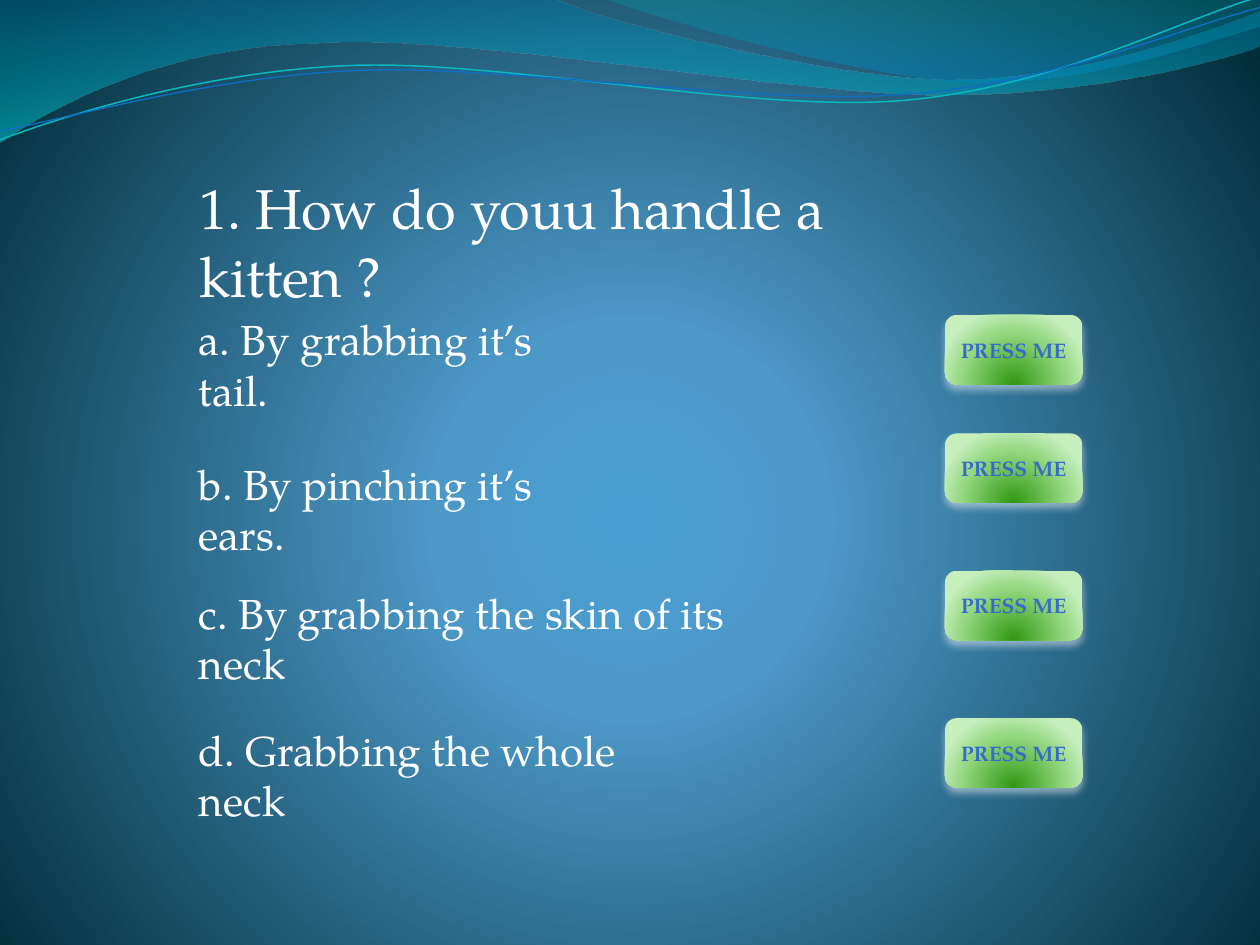
"""Build a quiz slide: one question, four answers and a button for each."""
from math import cos, radians, sin

from lxml.etree import SubElement
from pptx import Presentation
from pptx.dml.color import RGBColor
from pptx.enum.shapes import MSO_SHAPE
from pptx.enum.text import MSO_ANCHOR, MSO_AUTO_SIZE, PP_ALIGN
from pptx.oxml.ns import qn
from pptx.util import Inches, Pt

FONT = "TeX Gyre Pagella"
TILT = 2.7
COLORS = {
    "sky": "4AA0D6", "steel": "4C98C7", "night": "002C38",
    "deep": "0074A1", "aqua": "00C6CF", "teal": "00A1A9", "ocean": "008BBF",
    "cyan_line": "0AB8BF", "blue_line": "0F6FC6", "white": "FFFFFF",
    "green": "319811", "leaf": "95D882", "mint": "C6EFBD",
    "label1": "6488D4", "label2": "356BCA", "label3": "005DB1",
    "label4": "00539E", "label5": "00519B",
}
BACKDROP = [(0, "sky", 100), (25, "steel", 100), (100, "night", 100)]
BUTTON = [(0, "green", 100), (68, "leaf", 100), (100, "mint", 100)]
LABEL = [(0, "label1", 100), (49, "label2", 100), (50, "label3", 100),
         (92, "label4", 100), (100, "label5", 100)]
LEFT_WAVE = [
    [(0, 0)], [(4.4, -0.01)],
    [(4.76, 0.17), (6.64, 0.63), (7.58, 0.63)],
    [(8.53, 0.63), (9.58, 0.26), (10, 0.09)],
    [(10.01, 0.36)],
    [(9.83, 0.44), (8.7, 0.76), (7.46, 0.75)],
    [(6.22, 0.75), (3.82, 0.28), (2.57, 0.34)],
    [(1.29, 0.36), (0.46, 0.83), (-0.01, 1.13)],
    [(0, 0)],
]
RIGHT_WAVE = [
    [(4.79, -0.01)],
    [(5.09, 0.11), (6.82, 0.62), (7.69, 0.65)],
    [(8.56, 0.69), (9.61, 0.32), (10, 0.21)],
    [(10, 0)],
    [(4.79, -0.01)],
]
CYAN_CURVE = [
    [(0, 1.11)],
    [(0.48, 0.93), (1.58, 0.57), (2.77, 0.52)],
    [(3.95, 0.47), (5.93, 0.89), (7.13, 0.8)],
    [(8.33, 0.71), (9.38, 0.15), (9.98, -0.02)],
]
BLUE_CURVE = [
    [(0, 1.04)],
    [(0.47, 0.96), (1.64, 0.61), (2.83, 0.56)],
    [(4.03, 0.51), (5.97, 0.84), (7.17, 0.75)],
    [(8.36, 0.67), (9.41, 0.21), (10, 0.06)],
]
ANSWERS = [
    ("a. By grabbing it’s tail.", 2.44, 3.38),
    ("b. By pinching it’s ears.", 3.59, 3.51),
    ("c. By grabbing the skin of its neck", 4.61, 5.06),
    ("d. Grabbing the whole neck", 5.7, 4.19),
]
BUTTON_TOPS = [2.5, 4.53, 3.44, 5.7]


def rgb(name):
    """Return the named colour."""
    return RGBColor.from_string(COLORS[name])


def add_color(parent, name, opacity):
    """Append a colour with its opacity in percent."""
    color = SubElement(parent, qn("a:srgbClr"), val=COLORS[name])
    if opacity < 100:
        SubElement(color, qn("a:alpha"), val=str(opacity * 1000))


def set_gradient(fill, root, stops, focus=None):
    """Give a fill a downward gradient, or a circular one around a focus."""
    fill.background()
    grad = next(root.iter(qn("a:noFill")))
    grad.tag = qn("a:gradFill")
    grad.set("rotWithShape", "1")
    stop_list = SubElement(grad, qn("a:gsLst"))
    for pos, name, opacity in stops:
        stop = SubElement(stop_list, qn("a:gs"), pos=str(pos * 1000))
        add_color(stop, name, opacity)
    if focus:
        path = SubElement(grad, qn("a:path"))
        path.set("path", "circle")
        rect = SubElement(path, qn("a:fillToRect"))
        for side, value in zip("ltrb", focus):
            rect.set(side, str(value * 1000))
    else:
        SubElement(grad, qn("a:lin"), ang="5400000", scaled="0")


def turn(segments, center, degrees):
    """Turn all points clockwise about a center."""
    cx, cy = center
    c, d = cos(radians(degrees)), sin(radians(degrees))
    return [[(cx + (x - cx) * c - (y - cy) * d,
              cy + (x - cx) * d + (y - cy) * c) for x, y in segment]
            for segment in segments]


def add_outline(s, segments, close):
    """Add a freeform whose three-point segments are cubic curves."""
    points = [(Inches(x), Inches(y)) for seg in segments for x, y in seg]
    builder = s.shapes.build_freeform(*points[0])
    builder.add_line_segments(points[1:], close=close)
    sp = builder.convert_to_shape()
    sp.shadow.inherit = False
    steps = iter(list(sp.element.iter(qn("a:lnTo"))))
    for segment in segments[1:]:
        first, *others = [next(steps) for _ in segment]
        if others:
            first.tag = qn("a:cubicBezTo")
        for step in others:
            first.append(step[0])
            step.getparent().remove(step)
    return sp


def move_to_master(prs, sp):
    """Make a shape part of the master's decoration."""
    prs.slide_master.shapes.element.append(sp.element)


def add_wave(prs, s, segments, stops):
    """Add a filled translucent wave."""
    sp = add_outline(s, segments, True)
    set_gradient(sp.fill, sp.element, stops)
    sp.line.fill.background()
    move_to_master(prs, sp)


def add_curve(prs, s, segments, center, color, width):
    """Add an open curved line, tilted about its center."""
    sp = add_outline(s, turn(segments, center, TILT), False)
    sp.rotation = 360 - TILT
    sp.fill.background()
    sp.line.color.rgb = rgb(color)
    sp.line.width = Pt(width)
    move_to_master(prs, sp)


def add_run(p, text, size):
    """Add a run in the slide's font."""
    r = p.add_run()
    r.text = text
    r.font.name = FONT
    r.font.size = Pt(size)
    return r


def write_text(sp, text, size, box):
    """Place a text shape and fill it with one white paragraph."""
    sp.left, sp.top, sp.width, sp.height = map(Inches, box)
    tf = sp.text_frame
    tf.word_wrap = True
    tf.auto_size = MSO_AUTO_SIZE.SHAPE_TO_FIT_TEXT
    tf.vertical_anchor = MSO_ANCHOR.TOP
    p = tf.paragraphs[0]
    p.alignment = PP_ALIGN.LEFT
    add_run(p, text, size).font.color.rgb = rgb("white")


def add_button(s, top):
    """Add a green button with a soft glow below it."""
    sp = s.shapes.add_shape(MSO_SHAPE.ROUNDED_RECTANGLE, Inches(7.5),
                            Inches(top), Inches(1.09), Inches(0.55))
    set_gradient(sp.fill, sp.element, BUTTON, (50, 130, 50, -30))
    tf = sp.text_frame
    tf.word_wrap = True
    tf.vertical_anchor = MSO_ANCHOR.MIDDLE
    p = tf.paragraphs[0]
    p.alignment = PP_ALIGN.CENTER
    r = add_run(p, "PRESS ME", 12)
    r.font.bold = True
    set_gradient(r.font.fill, sp.element, LABEL)
    sp.line.fill.background()
    sp.shadow.inherit = False
    effects = next(sp.element.iter(qn("a:effectLst")))
    shadow = SubElement(effects, qn("a:outerShdw"), blurRad=str(Pt(4.5)),
                        dist=str(Pt(3)), dir="5400000", rotWithShape="0")
    add_color(shadow, "white", 48)


def main():
    """Build and save the slide."""
    prs = Presentation()
    prs.slide_width, prs.slide_height = Inches(10), Inches(7.5)
    s = prs.slides.add_slide(prs.slide_layouts[5])
    set_gradient(s.background.fill, s.element, BACKDROP, (10, 110, 10, 100))
    add_wave(prs, s, LEFT_WAVE, [(0, "deep", 45), (100, "aqua", 55)])
    add_wave(prs, s, RIGHT_WAVE, [(0, "teal", 30), (80, "ocean", 45)])
    add_curve(prs, s, CYAN_CURVE, (4.99, 0.58), "cyan_line", 0.85)
    add_curve(prs, s, BLUE_CURVE, (5, 0.59), "blue_line", 0.75)
    write_text(s.shapes.title, "1. How do youu handle a kitten ?", 32,
               (1.48, 1.33, 6.41, 0.64))
    for text, top, width in ANSWERS:
        write_text(s.shapes.add_textbox(0, 0, 0, 0), text, 24,
                   (1.48, top, width, 0.5))
    for top in BUTTON_TOPS:
        add_button(s, top)
    prs.save("out.pptx")


if __name__ == "__main__":
    main()
